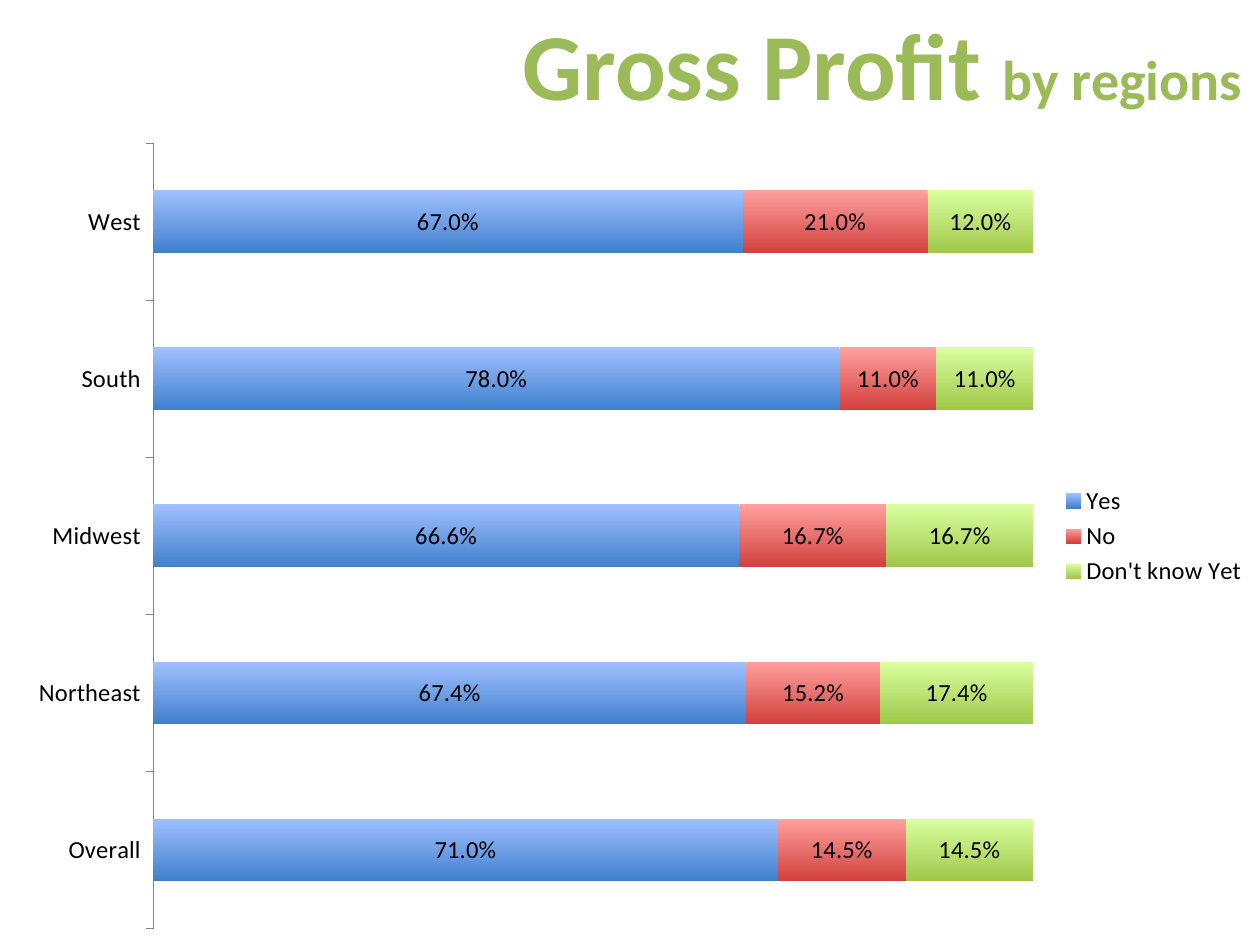
from lxml import etree
from pptx import Presentation
from pptx.chart.data import CategoryChartData
from pptx.dml.color import RGBColor
from pptx.enum.chart import XL_CHART_TYPE, XL_LABEL_POSITION, XL_LEGEND_POSITION, XL_TICK_MARK
from pptx.enum.text import MSO_ANCHOR, MSO_AUTO_SIZE, PP_ALIGN
from pptx.oxml import parse_xml
from pptx.util import Emu, Pt

STACKED = XL_CHART_TYPE.BAR_STACKED_100
CENTER_LABEL = XL_LABEL_POSITION.CENTER
LEGEND_RIGHT = XL_LEGEND_POSITION.RIGHT
TICK_OUT = XL_TICK_MARK.OUTSIDE
TITLE_ONLY = 5
PX = 914400 // 126
DRAWING_NS = "http://schemas.openxmlformats.org/drawingml/2006/main"

COLORS = {
    "title": "9BBB59",
    "title outline": "FEFEFE",
    "text": "000000",
    "axis": "868686",
    # Gradient from the top to the bottom of each bar
    "Yes": ("A0C0FF", "3F80CD"),
    "No": ("FFA09E", "D1403C"),
    "Don't know Yet": ("D9FFA0", "9FC748"),
}

REGIONS = ["Overall", "Northeast", "Midwest", "South", "West"]
ANSWERS = {
    "Yes": [0.71, 0.674, 0.666, 0.78, 0.67],
    "No": [0.145, 0.152, 0.167, 0.11, 0.21],
    "Don't know Yet": [0.145, 0.174, 0.167, 0.11, 0.12],
}


def rgb(value):
    return RGBColor.from_string(value)


class SlideBuilder:
    font_name = "Calibri"
    label_size = Pt(14)
    percent = "0.0%"

    def __init__(self, slide):
        self.slide = slide

    def place(self, left, top, width, height):
        return [Emu(length * PX) for length in (left, top, width, height)]

    def style(self, font, size, color="text", bold=False):
        font.name = self.font_name
        font.size = size
        font.bold = bold
        font.color.rgb = rgb(COLORS[color])

    def outline(self, run, color, width):
        line = parse_xml(
            f'<a:ln xmlns:a="{DRAWING_NS}" w="{int(width)}"><a:solidFill/></a:ln>')
        etree.SubElement(line[0], f"{{{DRAWING_NS}}}srgbClr", val=COLORS[color])
        run._r.get_or_add_rPr().insert(0, line)

    def title(self, box, parts):
        heading = self.slide.shapes.title
        heading.left, heading.top, heading.width, heading.height = self.place(*box)
        frame = heading.text_frame
        frame.word_wrap = False
        frame.auto_size = MSO_AUTO_SIZE.SHAPE_TO_FIT_TEXT
        frame.vertical_anchor = MSO_ANCHOR.TOP
        paragraph = frame.paragraphs[0]
        paragraph.alignment = PP_ALIGN.CENTER
        for text, size in parts:
            run = paragraph.add_run()
            run.text = text
            self.style(run.font, Pt(size), "title", bold=True)
            self.outline(run, "title outline", Pt(1.5))

    def stacked_bars(self, box, categories, answers):
        data = CategoryChartData(number_format=self.percent)
        data.categories = categories
        for answer, shares in answers.items():
            data.add_series(answer, shares)
        chart = self.slide.shapes.add_chart(STACKED, *self.place(*box), data).chart
        self.style(chart.font, Pt(10))
        chart.has_title = False

        # Axes
        regions = chart.category_axis
        regions.major_tick_mark = TICK_OUT
        regions.format.line.color.rgb = rgb(COLORS["axis"])
        self.style(regions.tick_labels.font, self.label_size)
        chart.value_axis.has_major_gridlines = False
        chart.value_axis.visible = False

        # Legend
        chart.has_legend = True
        chart.legend.position = LEGEND_RIGHT
        chart.legend.include_in_layout = False
        self.style(chart.legend.font, self.label_size)

        # Bars and their labels
        plot = chart.plots[0]
        plot.gap_width = 150
        plot.overlap = 100
        plot.vary_by_categories = False
        for series in plot.series:
            fill = series.format.fill
            fill.gradient()
            fill.gradient_angle = 270
            for stop, color in zip(fill.gradient_stops, COLORS[series.name]):
                stop.color.rgb = rgb(color)
            labels = series.data_labels
            labels.show_value = True
            labels.number_format = self.percent
            labels.number_format_is_linked = False
            labels.position = CENTER_LABEL
            self.style(labels.font, self.label_size)


def main():
    deck = Presentation()
    deck.slide_width, deck.slide_height = Emu(1260 * PX), Emu(945 * PX)
    builder = SlideBuilder(deck.slides.add_slide(deck.slide_layouts[TITLE_ONLY]))
    builder.title((505, 0, 755, 127), [("Gross Profit ", 54), ("by regions", 32)])
    builder.stacked_bars((14, 127, 1246, 818), REGIONS, ANSWERS)
    deck.save("out.pptx")


if __name__ == "__main__":
    main()
